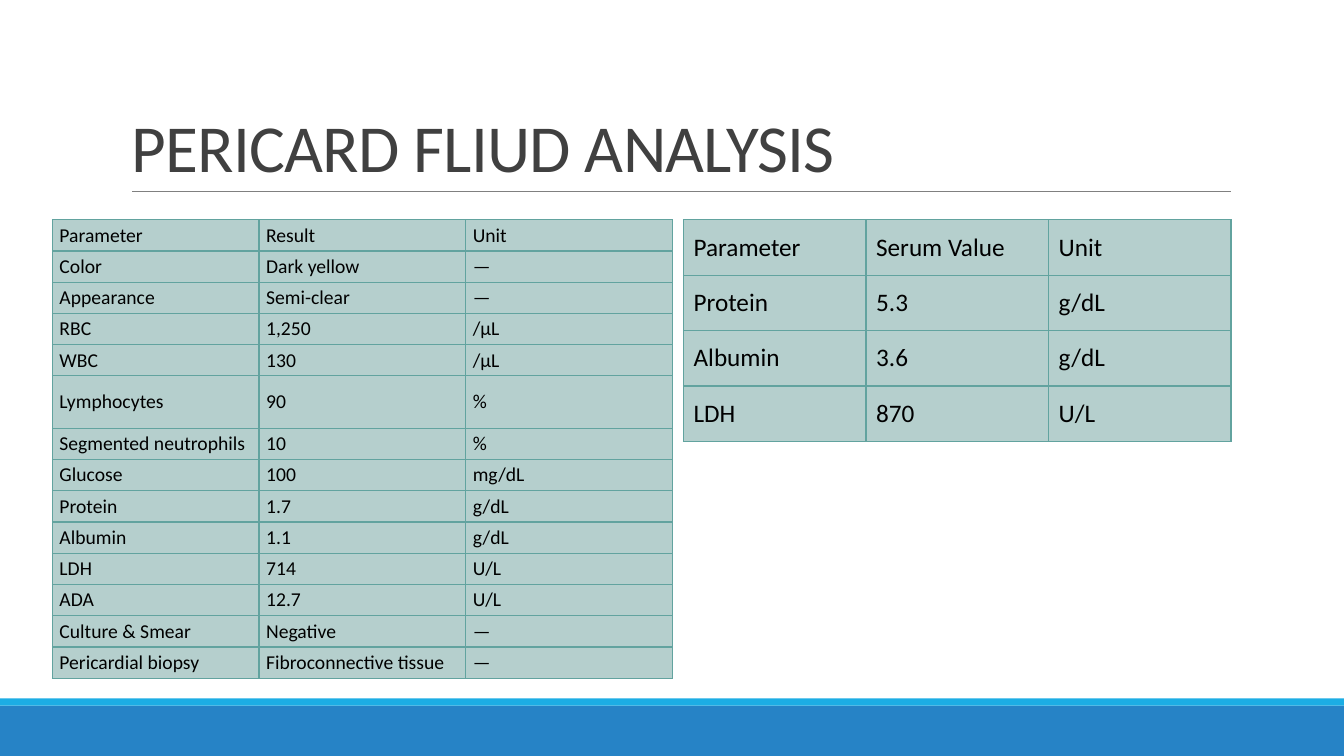
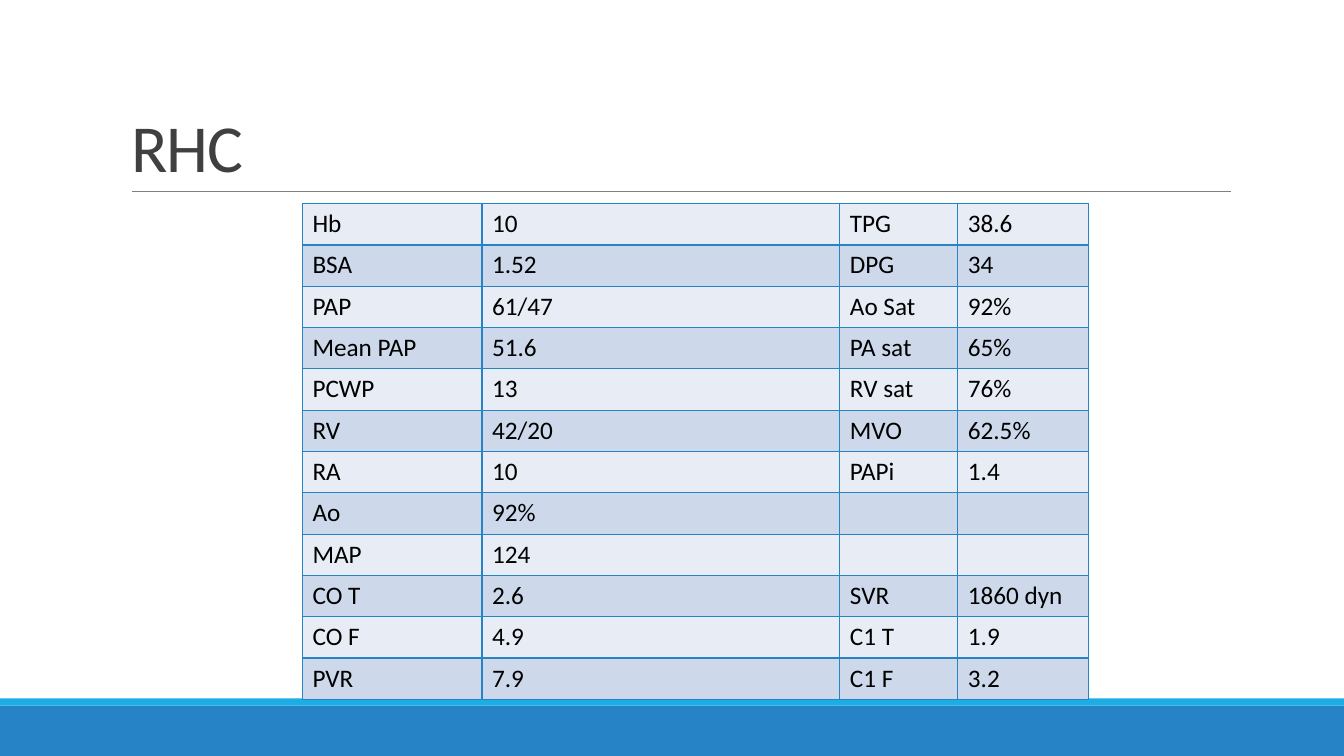
import pptx
import pptx.util
import pptx.dml.color
import pptx.enum.shapes
import pptx.enum.text
import pptx.oxml
import pptx.oxml.ns

Inches, Pt = pptx.util.Inches, pptx.util.Pt
Anchor = pptx.enum.text.MSO_ANCHOR

WIDTH, HEIGHT = 13.33, 7.5
FONT = "Calibri"
COLORS = {
    "band": "2683C6", "stripe": "1CADE4", "rule": "808080",
    "title": "404040", "text": "000000", "teal line": "62A39F",
    "teal": "B5CFCD", "light": "E8EDF5", "dark": "CDD9EA",
}

FLUID = [
    ("Parameter", "Result", "Unit"),
    ("Color", "Dark yellow", "—"),
    ("Appearance", "Semi-clear", "—"),
    ("RBC", "1,250", "/µL"),
    ("WBC", "130", "/µL"),
    ("Lymphocytes", "90", "%"),
    ("Segmented neutrophils", "10", "%"),
    ("Glucose", "100", "mg/dL"),
    ("Protein", "1.7", "g/dL"),
    ("Albumin", "1.1", "g/dL"),
    ("LDH", "714", "U/L"),
    ("ADA", "12.7", "U/L"),
    ("Culture & Smear", "Negative", "—"),
    ("Pericardial biopsy", "Fibroconnective tissue", "—"),
]
SERUM = [
    ("Parameter", "Serum Value", "Unit"),
    ("Protein", "5.3", "g/dL"),
    ("Albumin", "3.6", "g/dL"),
    ("LDH", "870", "U/L"),
]
RHC = [
    ("Hb", "10", "TPG", "38.6"),
    ("BSA", "1.52", "DPG", "34"),
    ("PAP", "61/47", "Ao Sat", "92%"),
    ("Mean PAP", "51.6", "PA sat", "65%"),
    ("PCWP", "13", "RV sat", "76%"),
    ("RV", "42/20", "MVO", "62.5%"),
    ("RA", "10", "PAPi", "1.4"),
    ("Ao", "92%", "", ""),
    ("MAP", "124", "", ""),
    ("CO T", "2.6", "SVR", "1860 dyn"),
    ("CO F", "4.9", "C1 T", "1.9"),
    ("PVR", "7.9", "C1 F", "3.2"),
]

TEAL = {"fills": ["teal"], "border": "teal line", "anchor": Anchor.MIDDLE}
SLIDES = [
    ("PERICARD FLIUD ANALYSIS", [
        dict(TEAL, rows=FLUID, at=(0.52, 2.18), cols=[2.05] * 3, row_height=0.31,
             tall_rows={5: 0.52}, size=14, margins=(Inches(0.07), Pt(2.6))),
        dict(TEAL, rows=SERUM, at=(6.78, 2.18), cols=[1.81] * 3, row_height=0.55),
    ]),
    ("RHC", [
        dict(rows=RHC, at=(3, 2.02), cols=[1.78, 3.55, 1.17, 1.3], row_height=0.41,
             fills=["light", "dark"], border="band", anchor=Anchor.TOP),
    ]),
]


def rgb(name):
    return pptx.dml.color.RGBColor.from_string(COLORS[name])


def set_font(p, size, color):
    p.font.name, p.font.size = FONT, Pt(size)
    p.font.color.rgb = rgb(color)


def add_band(slide, top, height, color):
    sp = slide.shapes.add_shape(pptx.enum.shapes.MSO_SHAPE.RECTANGLE, 0,
                                Inches(top), Inches(WIDTH), Inches(height))
    sp.shadow.inherit = False
    sp.fill.solid()
    sp.fill.fore_color.rgb = rgb(color)
    sp.line.fill.background()


def add_rule(slide, left, right, y):
    line = slide.shapes.add_connector(pptx.enum.shapes.MSO_CONNECTOR.STRAIGHT,
                                      Inches(left), Inches(y), Inches(right), Inches(y))
    line.line.color.rgb = rgb("rule")
    line.line.width = Pt(0.5)
    line._element.spPr.append(pptx.oxml.parse_xml(
        f"<a:effectLst {pptx.oxml.ns.nsdecls('a')}/>"))


def set_title(slide, text):
    title = slide.shapes.title
    title.left, title.top, title.width, title.height = map(Inches, (1.2, 0.31, 11, 1.59))
    tf = title.text_frame
    tf.text = text
    tf.auto_size = pptx.enum.text.MSO_AUTO_SIZE.NONE
    tf.vertical_anchor = Anchor.BOTTOM
    p = tf.paragraphs[0]
    p.alignment = pptx.enum.text.PP_ALIGN.LEFT
    p.line_spacing = 0.85
    set_font(p, 48, "title")
    p.runs[0].font._element.set("spc", "-50")


def set_borders(cell, color):
    tcPr = cell._tc.get_or_add_tcPr()
    for i, side in enumerate("LRTB"):
        tcPr.insert(i, pptx.oxml.parse_xml(
            f'<a:ln{side} {pptx.oxml.ns.nsdecls("a")} w="12700"><a:solidFill>'
            f'<a:srgbClr val="{COLORS[color]}"/></a:solidFill></a:ln{side}>'))


def add_table(slide, rows, at, cols, row_height, fills, border, anchor,
              tall_rows={}, size=18, margins=(Inches(0.1), Inches(0.05))):
    """Cycle the fills down the rows; tall_rows maps a row index to its height."""
    heights = [tall_rows.get(i, row_height) for i in range(len(rows))]
    table = slide.shapes.add_table(len(rows), len(cols), *map(
        Inches, (*at, sum(cols), sum(heights)))).table
    table.first_row = table.horz_banding = False
    for column, width in zip(table.columns, cols):
        column.width = Inches(width)
    for i, (row, texts) in enumerate(zip(table.rows, rows)):
        row.height = Inches(heights[i])
        for cell, text in zip(row.cells, texts):
            cell.text = text
            cell.vertical_anchor = anchor
            cell.margin_left = cell.margin_right = margins[0]
            cell.margin_top = cell.margin_bottom = margins[1]
            set_font(cell.text_frame.paragraphs[0], size, "text")
            cell.fill.solid()
            cell.fill.fore_color.rgb = rgb(fills[i % len(fills)])
            set_borders(cell, border)


def main():
    prs = pptx.Presentation()
    prs.slide_width, prs.slide_height = Inches(WIDTH), Inches(HEIGHT)
    for title, tables in SLIDES:
        slide = prs.slides.add_slide(prs.slide_layouts.get_by_name("Title Only"))
        add_band(slide, 7, 0.5, "band")
        add_band(slide, 6.93, 0.07, "stripe")
        add_rule(slide, 1.31, 12.21, 1.9)
        set_title(slide, title)
        for table in tables:
            add_table(slide, **table)
    prs.save("out.pptx")


if __name__ == "__main__":
    main()
